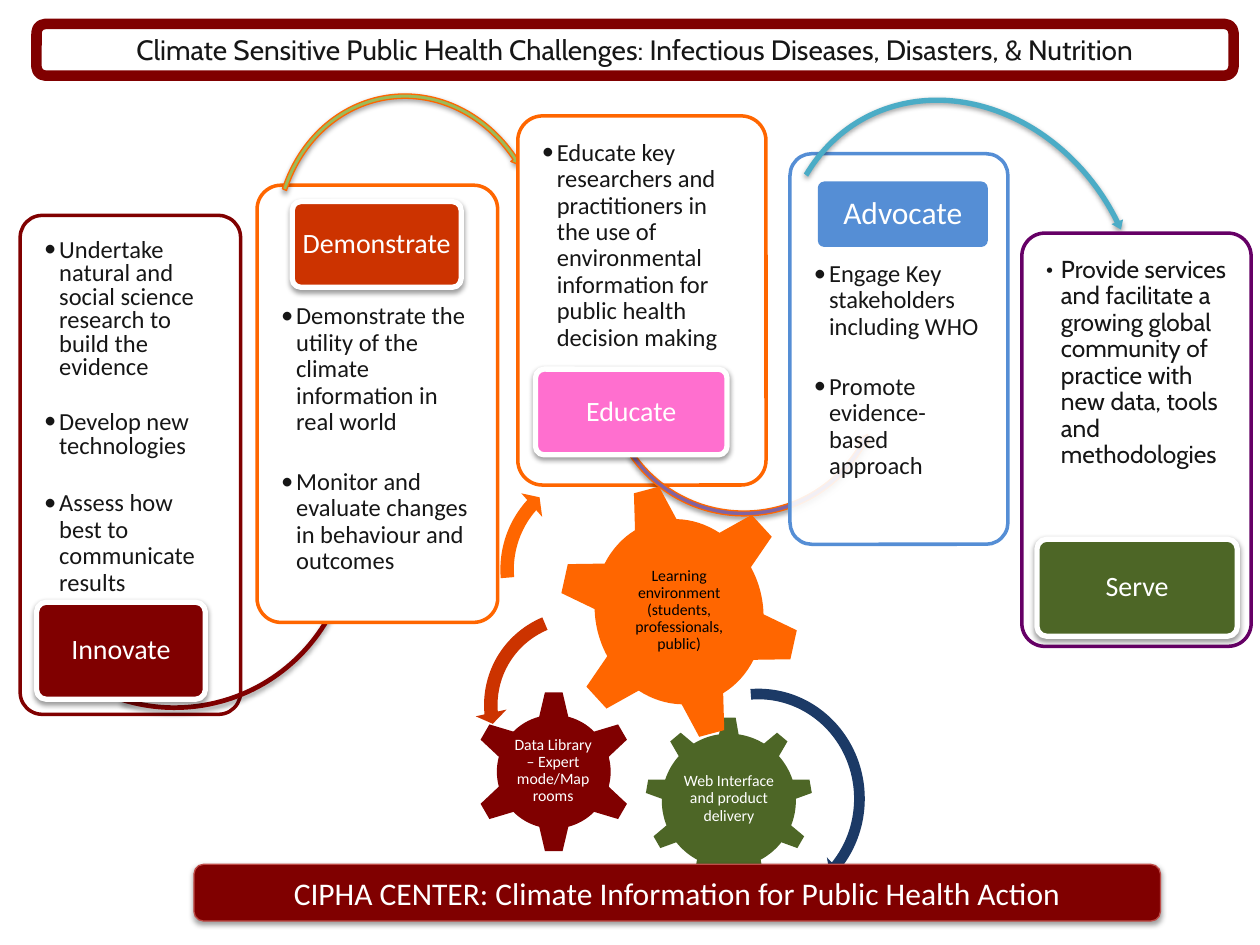
from dataclasses import dataclass

from lxml.etree import SubElement
from pptx import Presentation
from pptx.dml.color import RGBColor
from pptx.enum.shapes import MSO_SHAPE
from pptx.enum.text import MSO_ANCHOR, PP_ALIGN
from pptx.oxml.ns import qn
from pptx.util import Inches, Pt

WIDE, HIGH = Inches(10), Inches(7.5)
COL, ROW = WIDE / 100, HIGH / 75
RIGHT, LEFT = MSO_SHAPE.CIRCULAR_ARROW, MSO_SHAPE.LEFT_CIRCULAR_ARROW


@dataclass(frozen=True)
class Theme:
    font: str = "Calibri"
    alt: str = "Cabin"
    tiny: int = 9
    body: int = 14
    label: int = 16
    large: int = 18
    gap: int = 19
    ink: str = "161616"
    black: str = "000000"
    white: str = "FFFFFF"
    maroon: str = "800000"
    rose: str = "BF4C48"
    orange: str = "FF6600"
    rust: str = "CC3300"
    pink: str = "FF6FCF"
    blue: str = "558ED5"
    navy: str = "1C3A66"
    teal: str = "4BACC6"
    lime: str = "9BBB59"
    violet: str = "8064A2"
    purple: str = "660066"
    green: str = "4D6626"


T = Theme()


def place(left, top, width, height):
    return [round(n) for n in (left * COL, top * ROW, width * COL, height * ROW)]


def add_shade(shape):
    effects = shape._element.spPr.find(qn("a:effectLst"))
    shade = SubElement(effects, qn("a:outerShdw"), blurRad=str(Pt(3.1)),
                       dist=str(Pt(1.6)), dir="5400000", rotWithShape="0")
    tint = SubElement(shade, qn("a:srgbClr"), val=T.black)
    SubElement(tint, qn("a:alpha"), val="38000")


def draw(slide, kind, box, fill=None, line=None, weight=0, round_by=None, shade=False):
    shape = slide.shapes.add_shape(kind, *place(*box))
    shape.shadow.inherit = False
    if fill:
        shape.fill.solid()
        shape.fill.fore_color.rgb = RGBColor.from_string(fill)
    else:
        shape.fill.background()
    if line:
        shape.line.color.rgb = RGBColor.from_string(line)
        shape.line.width = Pt(weight)
    else:
        shape.line.fill.background()
    if round_by:
        shape.adjustments[0] = round_by
    if shade:
        add_shade(shape)
    return shape


def set_frame(frame, inset, anchor=MSO_ANCHOR.MIDDLE):
    frame.word_wrap = True
    frame.vertical_anchor = anchor
    frame.margin_left = frame.margin_right = Inches(inset)
    frame.margin_top = frame.margin_bottom = Inches(inset)


def style(para, size, color, font=T.font, space=0.9):
    para.line_spacing = space
    para.font.size = Pt(size)
    para.font.name = font
    para.font.color.rgb = RGBColor.from_string(color)


def write(shape, text, size, color, font=T.font, inset=0.03, space=0.9):
    set_frame(shape.text_frame, inset)
    para = shape.text_frame.paragraphs[0]
    para.text = text
    para.alignment = PP_ALIGN.CENTER
    style(para, size, color, font, space)


def add_list(slide, box, items, font, tight):
    frame = slide.shapes.add_textbox(*place(*box)).text_frame
    set_frame(frame, 0.14, MSO_ANCHOR.TOP)
    for i, text in enumerate(items):
        para = frame.add_paragraph() if i else frame.paragraphs[0]
        para.text = text
        para.level = 1
        props = para._p.get_or_add_pPr()
        props.set("marL", str(Inches(0.12)))
        props.set("indent", str(-Inches(0.12)))
        SubElement(props, qn("a:buFont"), typeface=font)
        SubElement(props, qn("a:buChar"), char="•")
        if i:
            para.space_before = Pt(T.gap - 1 if tight else T.gap)
        style(para, T.body, T.ink, font, 0.8 if i < tight else 0.9)


def add_arc(slide, kind, box, fill, thick, head, end, start, turn=0, line=None, shade=False):
    arc = draw(slide, kind, box, fill, line, 0.75, shade=shade)
    arc.rotation = turn
    values = thick / 100, head, end, start, thick * 7 / 600
    for i, value in enumerate(values):
        arc.adjustments[i] = value


def add_card(slide, box, edge, items, name, tab, fill, arc=None, font=T.font,
             tight=0, size=T.label, flat=False, clear=False):
    left, top, width, height = box
    card = draw(slide, MSO_SHAPE.ROUNDED_RECTANGLE, box, T.white, edge, 2, 0.1)
    if clear:
        tint = card._element.spPr.find(qn("a:solidFill"))[0]
        SubElement(tint, qn("a:alpha"), val="90000")
    drop = 0.23 * height if tab[1] < top + height / 2 else 0.5
    add_list(slide, (left + 0.5, top + drop, width - 1, 0.75 * height), items, font, tight)
    if arc:
        add_arc(slide, *arc, shade=True)
    label = draw(slide, MSO_SHAPE.ROUNDED_RECTANGLE, tab, fill,
                 None if flat else T.white, 3, 0.1, not flat)
    write(label, name, size, T.white)


def add_gear(slide, kind, box, fill, text, area, color=T.white, turn=0):
    draw(slide, kind, box, fill).rotation = turn
    write(slide.shapes.add_textbox(*place(*area)), text, T.tiny, color, inset=0.01)


def add_cards(slide):
    add_card(slide, (1.6, 17.1, 17.5, 39.6), T.maroon,
             ["Undertake natural and social science research to build the evidence",
              "Develop new technologies",
              "Assess how best to communicate results"],
             "Innovate", (2.9, 47.8, 13.4, 7.7), T.maroon,
             (LEFT, (-0.6, 27.7, 28.9, 28.9), T.maroon, 1.3, 1.57, 209.58, 64.5), tight=2)
    add_card(slide, (20.4, 14.7, 19.1, 34.7), T.orange,
             ["Demonstrate the utility of the climate information in real world",
              "Monitor and evaluate changes in behaviour and outcomes"],
             "Demonstrate", (23.2, 16, 13.4, 6.8), T.rust,
             (RIGHT, (21.6, 7.2, 21.8, 24.3), T.lime, 1.6, 1.92, 197.96, 127.39, 351.1, T.orange))
    add_card(slide, (41.1, 9.2, 19.7, 29.3), T.orange,
             ["Educate key researchers and practitioners in the use of environmental "
              "information for public health decision making"],
             "Educate", (42.5, 29.3, 15.2, 6.8), T.pink,
             (LEFT, (47.8, 18.7, 22.5, 22.5), T.violet, 1.7, 2.02, 16.9, 87.37, 0, T.orange))
    add_card(slide, (62.7, 12.2, 17.3, 31), T.blue,
             ["Engage Key stakeholders including WHO",
              "Promote evidence-based approach"],
             "Advocate", (64.9, 14.4, 13.5, 5.2), T.blue,
             (RIGHT, (62.2, 6.9, 28.2, 32.8), T.teal, 1.5, 1.74, 3.4, 148.64, 329.6),
             size=T.large, flat=True, clear=True)
    add_card(slide, (81.1, 18.5, 18.2, 32.8), T.purple,
             ["Provide services and facilitate a growing global community of practice "
              "with new data, tools and methodologies"],
             "Serve", (82.3, 42.8, 15.9, 7.7), T.green, font=T.alt)


def add_gears(slide):
    add_gear(slide, MSO_SHAPE.GEAR_9, (51.2, 56.9, 13.3, 13.3), T.green,
             "Web Interface and product delivery", (53.9, 60, 7.9, 6.8))
    add_gear(slide, MSO_SHAPE.GEAR_6, (37.5, 54.8, 12.9, 12.9), T.maroon,
             "Data Library – Expert mode/Map rooms", (40.7, 58, 6.4, 6.4))
    add_gear(slide, MSO_SHAPE.GEAR_6, (44.4, 38.3, 19, 20.5), T.orange,
             "Learning environment (students, professionals, public)",
             (48.5, 42.8, 10.8, 11.3), T.black, 345)
    add_arc(slide, RIGHT, (51.2, 54.1, 18, 18.6), T.navy, 4.7, 2.99, 24.77, 159.49)
    add_arc(slide, LEFT, (37.7, 47.7, 16.5, 16.5), T.rust, 6.5, 4.3, 104.89, 148.38)
    add_arc(slide, RIGHT, (39, 36.3, 17.8, 17.8), T.orange, 6, 3.94, 133.14, 105.08)


def add_bars(slide):
    title = draw(slide, MSO_SHAPE.ROUNDED_RECTANGLE, (2.9, 1.9, 95, 4.1),
                 line=T.maroon, weight=6)
    write(title, "Climate Sensitive Public Health Challenges: Infectious Diseases, "
          "Disasters, & Nutrition", T.label, T.ink, T.alt, space=1)
    base = draw(slide, MSO_SHAPE.ROUNDED_RECTANGLE, (15.4, 68.6, 76.7, 4.5),
                T.maroon, T.rose, 0.75, shade=True)
    write(base, "CIPHA CENTER: Climate Information for Public Health Action",
          T.large, T.white, space=1)


def main():
    deck = Presentation()
    deck.slide_width, deck.slide_height = WIDE, HIGH
    slide = deck.slides.add_slide(deck.slide_layouts[6])
    add_cards(slide)
    add_gears(slide)
    add_bars(slide)
    deck.save("out.pptx")


if __name__ == "__main__":
    main()
